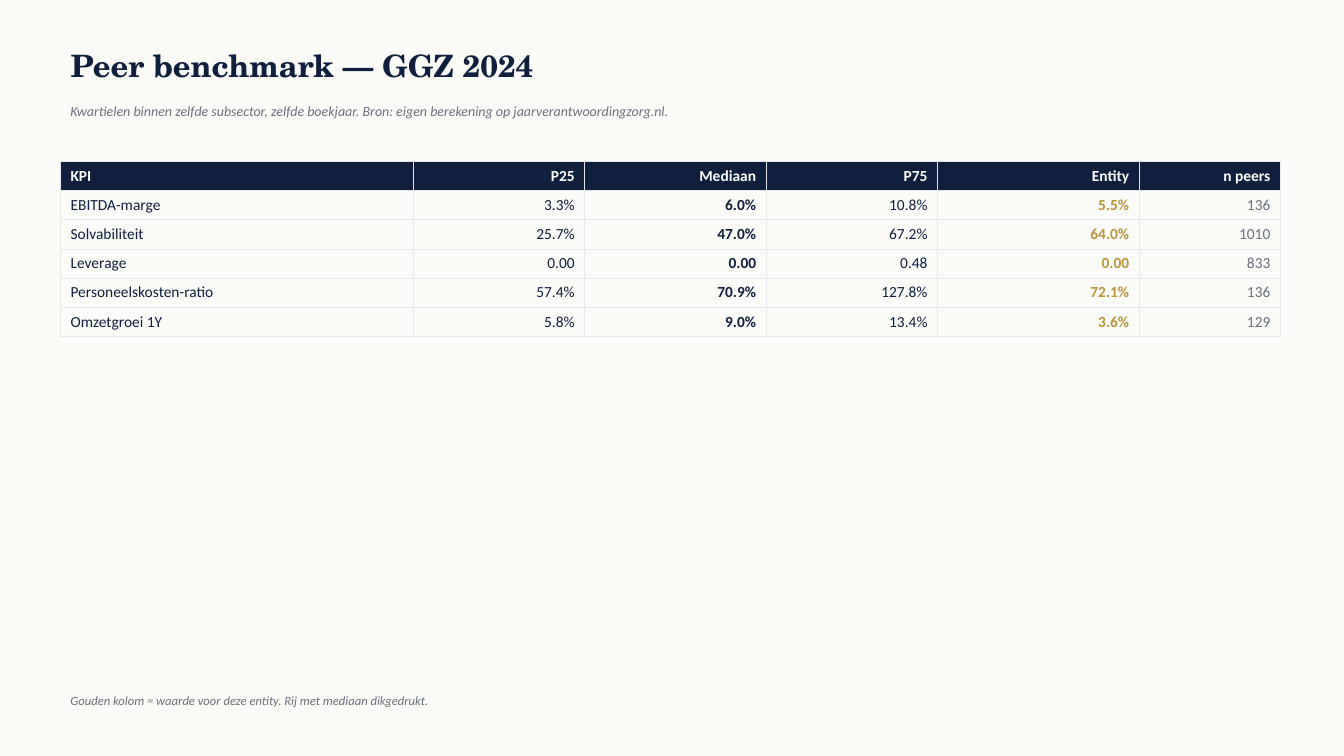
from lxml.etree import SubElement
from pptx import Presentation
from pptx.dml.color import RGBColor
from pptx.enum.text import MSO_ANCHOR, MSO_AUTO_SIZE, PP_ALIGN
from pptx.oxml.ns import qn
from pptx.util import Emu, Pt

NAVY = RGBColor(0x0F, 0x1F, 0x3D)
GOLD = RGBColor(0xB8, 0x97, 0x3B)
GREY = RGBColor(0x6B, 0x72, 0x80)
WHITE = RGBColor(0xFF, 0xFF, 0xFF)
PAPER = RGBColor(0xFA, 0xFA, 0xF7)
RULE = RGBColor(0xE5, 0xE7, 0xEB)
SERIF, SANS = "TeX Gyre Schola", "Calibri"

TITLE = "Peer benchmark — GGZ 2024"
SUBTITLE = ("Kwartielen binnen zelfde subsector, zelfde boekjaar. "
            "Bron: eigen berekening op jaarverantwoordingzorg.nl.")
FOOTNOTE = "Gouden kolom = waarde voor deze entity. Rij met mediaan dikgedrukt."

# heading, width in px, body colour, body bold
COLUMNS = [
    ("KPI", 350, NAVY, False),
    ("P25", 170, NAVY, False),
    ("Mediaan", 180, NAVY, True),
    ("P75", 170, NAVY, False),
    ("Entity", 200, GOLD, True),
    ("n peers", 140, GREY, False),
]
BENCHMARKS = [
    ("EBITDA-marge", "3.3%", "6.0%", "10.8%", "5.5%", "136"),
    ("Solvabiliteit", "25.7%", "47.0%", "67.2%", "64.0%", "1010"),
    ("Leverage", "0.00", "0.00", "0.48", "0.00", "833"),
    ("Personeelskosten-ratio", "57.4%", "70.9%", "127.8%", "72.1%", "136"),
    ("Omzetgroei 1Y", "5.8%", "9.0%", "13.4%", "3.6%", "129"),
]

PX_PER_INCH = 100
SLIDE_WIDTH, SLIDE_HEIGHT = 1333, 750
LEFT, TEXT_WIDTH = 60, 1200
TABLE_TOP, ROW_HEIGHT = 160, 29


def px(length):
    return Emu(length * 914400 // PX_PER_INCH)


def style_font(paragraph, name, size, color, bold=False, italic=False):
    font = paragraph.font
    font.name, font.size = name, Pt(size)
    font.bold, font.italic = bold, italic
    font.color.rgb = color


def fill_text(shape, text, top, height, **font):
    shape.left, shape.top = px(LEFT), px(top)
    shape.width, shape.height = px(TEXT_WIDTH), px(height)
    frame = shape.text_frame
    frame.text = text
    frame.word_wrap = True
    frame.auto_size = MSO_AUTO_SIZE.NONE
    frame.vertical_anchor = MSO_ANCHOR.MIDDLE
    paragraph = frame.paragraphs[0]
    paragraph.alignment = PP_ALIGN.LEFT
    style_font(paragraph, **font)


def add_note(slide, text, top, size):
    shape = slide.shapes.add_textbox(0, 0, px(TEXT_WIDTH), px(30))
    fill_text(shape, text, top, 30, name=SANS, size=size, color=GREY, italic=True)


def set_borders(cell):
    properties = cell._tc.get_or_add_tcPr()
    for side in ("a:lnL", "a:lnR", "a:lnT", "a:lnB"):
        line = SubElement(properties, qn(side), w=str(Pt(0.5)))
        fill = SubElement(line, qn("a:solidFill"))
        SubElement(fill, qn("a:srgbClr"), val=str(RULE))


def add_benchmark_table(slide):
    rows = [[heading for heading, *_ in COLUMNS], *BENCHMARKS]
    width = sum(column[1] for column in COLUMNS)
    table = slide.shapes.add_table(
        len(rows), len(COLUMNS), px(LEFT), px(TABLE_TOP),
        px(width), px(ROW_HEIGHT * len(rows))).table
    table.horz_banding = False
    for c, (_, column_width, color, bold) in enumerate(COLUMNS):
        table.columns[c].width = px(column_width)
        for r, row in enumerate(rows):
            is_header = r == 0
            cell = table.cell(r, c)
            cell.text = row[c]
            set_borders(cell)
            if is_header:
                cell.fill.solid()
                cell.fill.fore_color.rgb = NAVY
            else:
                cell.fill.background()
            paragraph = cell.text_frame.paragraphs[0]
            paragraph.alignment = PP_ALIGN.RIGHT if c else PP_ALIGN.LEFT
            style_font(paragraph, SANS, 11, WHITE if is_header else color,
                       bold=is_header or bold)


def main():
    presentation = Presentation()
    presentation.slide_width = px(SLIDE_WIDTH)
    presentation.slide_height = px(SLIDE_HEIGHT)
    slide = presentation.slides.add_slide(presentation.slide_layouts[5])
    slide.background.fill.solid()
    slide.background.fill.fore_color.rgb = PAPER

    fill_text(slide.shapes.title, TITLE, 40, 50,
              name=SERIF, size=22, color=NAVY, bold=True)
    add_note(slide, SUBTITLE, 95, size=10)
    add_benchmark_table(slide)
    add_note(slide, FOOTNOTE, 680, size=9)
    presentation.save("out.pptx")


if __name__ == "__main__":
    main()
